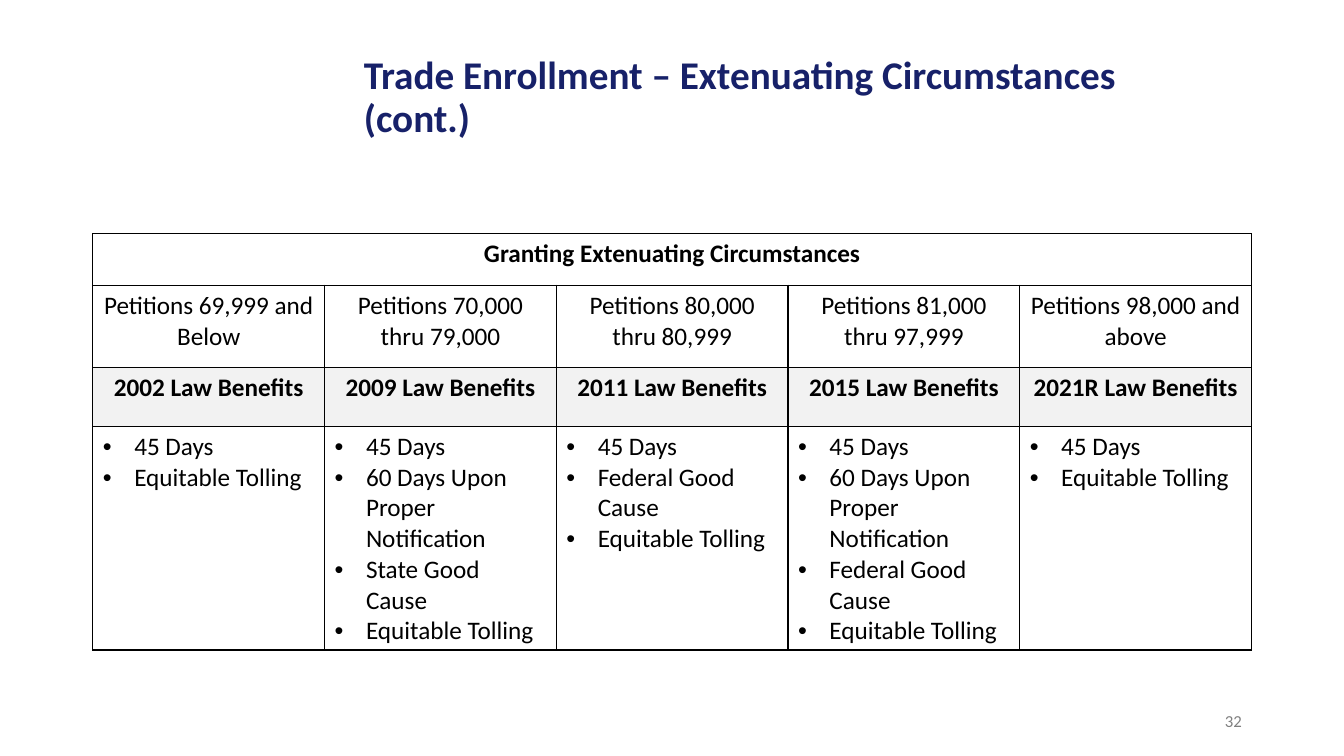
from dataclasses import dataclass

import pptx
import pptx.dml.color
import pptx.enum.text
import pptx.oxml
import pptx.oxml.ns
import pptx.presentation
import pptx.slide
import pptx.table
import pptx.text.text
import pptx.util

Cm = pptx.util.Cm
Pt = pptx.util.Pt
PP_ALIGN = pptx.enum.text.PP_ALIGN
MIDDLE = pptx.enum.text.MSO_ANCHOR.MIDDLE


@dataclass(frozen=True)
class Theme:
    font: str = "Calibri"
    title: str = "172169"
    ink: str = "000000"
    muted: str = "808080"
    band: str = "F2F2F2"
    title_size: int = 28
    body_size: int = 18
    number_size: int = 12
    border: float = 1


@dataclass(frozen=True)
class LawColumn:
    petitions: list[str]
    law: str
    grounds: list[str]


THEME = Theme()
HEADING = "Granting Extenuating Circumstances"
LAWS = [
    LawColumn(["Petitions 69,999 and Below"], "2002 Law Benefits",
              ["45 Days", "Equitable Tolling"]),
    LawColumn(["Petitions 70,000 thru 79,000"], "2009 Law Benefits",
              ["45 Days", "60 Days Upon Proper Notification",
               "State Good Cause", "Equitable Tolling"]),
    LawColumn(["Petitions 80,000 thru 80,999"], "2011 Law Benefits",
              ["45 Days", "Federal Good Cause", "Equitable Tolling"]),
    LawColumn(["Petitions 81,000", "thru 97,999"], "2015 Law Benefits",
              ["45 Days", "60 Days Upon Proper Notification",
               "Federal Good Cause", "Equitable Tolling"]),
    LawColumn(["Petitions 98,000 and above"], "2021R Law Benefits",
              ["45 Days", "Equitable Tolling"]),
]
COLUMN_WIDTH = 5.84
ROW_HEIGHTS = [1.3, 2.07, 1.48, 5.64]
BULLET_INDENT = Cm(0.79)


def add_bullet(p: pptx.text.text._Paragraph) -> None:
    pPr = p._p.get_or_add_pPr()
    pPr.set("marL", str(BULLET_INDENT))
    pPr.set("indent", str(-BULLET_INDENT))
    ns = pptx.oxml.ns.nsdecls("a")
    pPr.append(pptx.oxml.parse_xml(f'<a:buFont {ns} typeface="Arial"/>'))
    pPr.append(pptx.oxml.parse_xml(f'<a:buChar {ns} char="•"/>'))


def write(tf: pptx.text.text.TextFrame, lines: list[str], *,
          size: int = THEME.body_size, color: str = THEME.ink,
          bold: bool = False, align: PP_ALIGN = PP_ALIGN.LEFT,
          spacing: float = 1.0, bullets: bool = False) -> None:
    """Fill a text frame with one paragraph per line."""
    tf.word_wrap = True
    for i, line in enumerate(lines):
        p = tf.paragraphs[0] if i == 0 else tf.add_paragraph()
        p.alignment = align
        p.line_spacing = spacing
        if bullets:
            add_bullet(p)
        r = p.add_run()
        r.text = line
        r.font.name = THEME.font
        r.font.size = Pt(size)
        r.font.bold = bold
        r.font.color.rgb = pptx.dml.color.RGBColor.from_string(color)


def add_textbox(slide: pptx.slide.Slide, left: float, top: float,
                width: float, height: float) -> pptx.text.text.TextFrame:
    tf = slide.shapes.add_textbox(Cm(left), Cm(top), Cm(width), Cm(height)).text_frame
    tf.vertical_anchor = MIDDLE
    return tf


def style_cell(cell: pptx.table._Cell, fill: str | None) -> None:
    """Draw all four borders, then set the fill, which must follow them in the XML."""
    tcPr = cell._tc.get_or_add_tcPr()
    for side in ("lnL", "lnR", "lnT", "lnB"):
        tcPr.append(pptx.oxml.parse_xml(
            f'<a:{side} {pptx.oxml.ns.nsdecls("a")} w="{Pt(THEME.border)}">'
            f'<a:solidFill><a:srgbClr val="{THEME.ink}"/></a:solidFill></a:{side}>'))
    if fill is None:
        cell.fill.background()
    else:
        cell.fill.solid()
        cell.fill.fore_color.rgb = pptx.dml.color.RGBColor.from_string(fill)


def add_law_table(slide: pptx.slide.Slide) -> None:
    table = slide.shapes.add_table(
        len(ROW_HEIGHTS), len(LAWS), Cm(2.34), Cm(5.89),
        Cm(COLUMN_WIDTH * len(LAWS)), Cm(sum(ROW_HEIGHTS))).table
    table.first_row = table.horz_banding = False
    for row, height in zip(table.rows, ROW_HEIGHTS):
        row.height = Cm(height)
    for column in table.columns:
        column.width = Cm(COLUMN_WIDTH)
    for i, row in enumerate(table.rows):
        for cell in row.cells:
            style_cell(cell, THEME.band if i == 2 else None)

    table.cell(0, 0).merge(table.cell(0, len(LAWS) - 1))
    write(table.cell(0, 0).text_frame, [HEADING], bold=True, align=PP_ALIGN.CENTER)
    for c, law in enumerate(LAWS):
        write(table.cell(1, c).text_frame, law.petitions, align=PP_ALIGN.CENTER)
        write(table.cell(2, c).text_frame, [law.law], bold=True, align=PP_ALIGN.CENTER)
        write(table.cell(3, c).text_frame, law.grounds, bullets=True)


def main() -> None:
    prs = pptx.Presentation()
    prs.slide_width, prs.slide_height = Cm(33.87), Cm(19.05)
    slide = prs.slides.add_slide(prs.slide_layouts[6])
    write(add_textbox(slide, 8.92, 1.7, 21.16, 1.55),
          ["Trade Enrollment – Extenuating Circumstances (cont.)"],
          size=THEME.title_size, color=THEME.title, bold=True, spacing=0.9)
    add_law_table(slide)
    write(add_textbox(slide, 23.93, 17.65, 7.62, 1.02), ["32"],
          size=THEME.number_size, color=THEME.muted, align=PP_ALIGN.RIGHT)
    prs.save("out.pptx")


if __name__ == "__main__":
    main()
